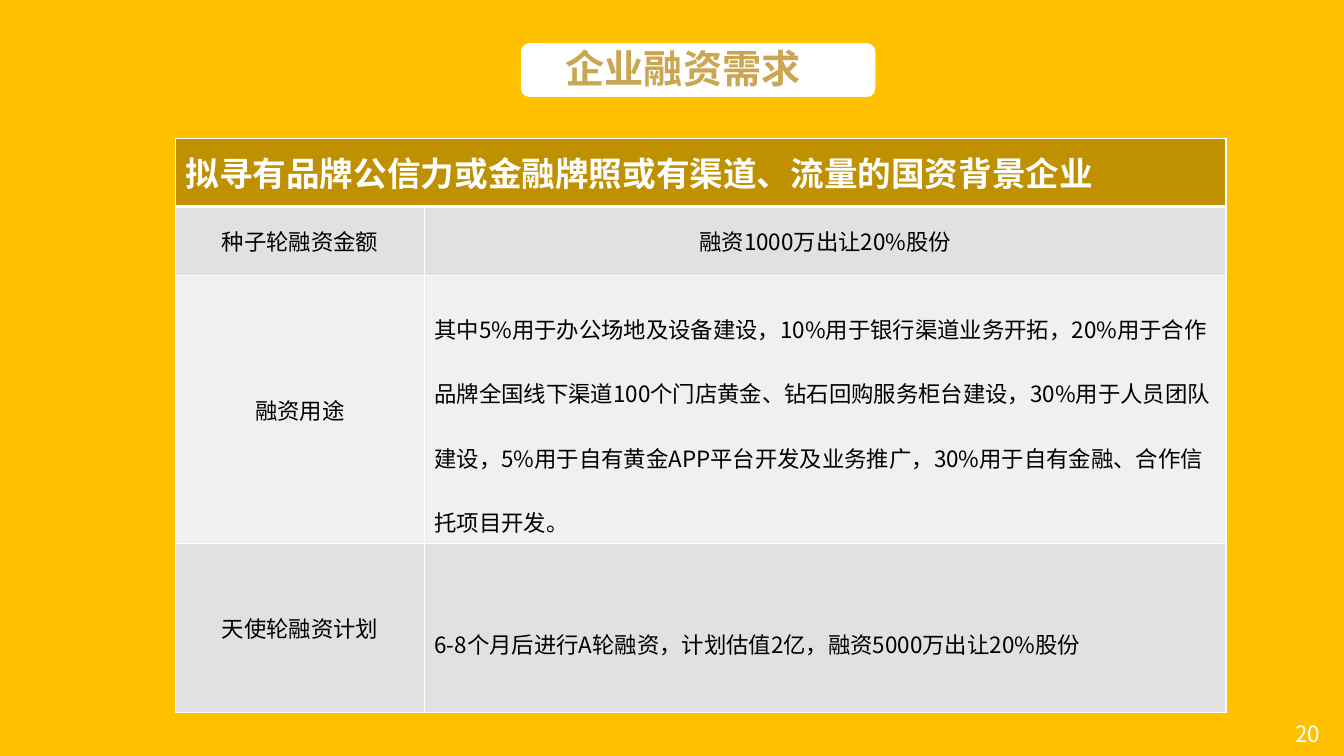
from lxml import etree
from pptx import Presentation
from pptx.dml.color import RGBColor
from pptx.enum import shapes, text
from pptx.oxml import ns
from pptx.util import Inches, Pt

GOLD = RGBColor(0xFF, 0xC0, 0x00)
EDGE = RGBColor(0xFF, 0xC6, 0x00)
WHITE = RGBColor(0xFF, 0xFF, 0xFF)
BLACK = RGBColor(0, 0, 0)
TAN = RGBColor(0xCA, 0xA6, 0x52)
BROWN = RGBColor(0xBF, 0x90, 0x00)
GREY = RGBColor(0xE1, 0xE1, 0xE1)
PALE = RGBColor(0xF0, 0xF0, 0xF0)
SANS = "Noto Sans CJK SC"


def style(para, size, color, bold=False, name=SANS):
    for run in para.runs:
        font = run.font
        font.size, font.bold, font.name = Pt(size), bold, name
        font.color.rgb = color
        latin = run._r.rPr.find(ns.qn("a:latin"))
        east = etree.Element(ns.qn("a:ea"), typeface=SANS)
        latin.addnext(east)


def border(cell, base):
    props = cell._tc.get_or_add_tcPr()
    for spot, (side, width) in enumerate([("L", 1), ("R", 1), ("T", 1), ("B", base)]):
        line = etree.Element(ns.qn("a:ln" + side), w=str(Pt(width)))
        fill = etree.SubElement(line, ns.qn("a:solidFill"))
        etree.SubElement(fill, ns.qn("a:srgbClr"), val=str(WHITE))
        props.insert(spot, line)


deck = Presentation()
deck.slide_width, deck.slide_height = Inches(13.33), Inches(7.5)
slide = deck.slides.add_slide(deck.slide_layouts[5])
slide.background.fill.solid()
slide.background.fill.fore_color.rgb = GOLD

plate = slide.shapes.add_shape(
    shapes.MSO_SHAPE.ROUNDED_RECTANGLE, Inches(5.16), Inches(0.42), Inches(3.53), Inches(0.55))
plate.shadow.inherit = False
plate.fill.solid()
plate.fill.fore_color.rgb = WHITE
plate.line.color.rgb = EDGE
plate.line.width = Pt(1)

title = slide.shapes.title
slide.shapes._spTree.append(title._element)
title.left, title.top = Inches(5.51), Inches(0.44)
title.width, title.height = Inches(2.56), Inches(0.53)
frame = title.text_frame
frame.text = "企业融资需求"
frame.word_wrap = False
frame.auto_size = text.MSO_AUTO_SIZE.NONE
frame.vertical_anchor = text.MSO_ANCHOR.TOP
para = frame.paragraphs[0]
para.alignment = text.PP_ALIGN.LEFT
para.line_spacing = 0.9
style(para, 28, TAN, True)

rows = [
    ("拟寻有品牌公信力或金融牌照或有渠道、流量的国资背景企业", "", 0.68, BROWN),
    ("种子轮融资金额", "融资1000万出让20%股份", 0.68, GREY),
    ("融资用途",
     "其中5%用于办公场地及设备建设，10%用于银行渠道业务开拓，20%用于合作品牌全国线下渠道"
     "100个门店黄金、钻石回购服务柜台建设，30%用于人员团队建设，5%用于自有黄金APP平台开发"
     "及业务推广，30%用于自有金融、合作信托项目开发。", 2.23, PALE),
    ("天使轮融资计划", "6-8个月后进行A轮融资，计划估值2亿，融资5000万出让20%股份", 1.68, GREY),
]
table = slide.shapes.add_table(
    len(rows), 2, Inches(1.74), Inches(1.37), Inches(10.42), Inches(5.27)).table
table.columns[0].width, table.columns[1].width = Inches(2.47), Inches(7.95)
table.cell(0, 0).merge(table.cell(0, 1))
for r, (label, detail, height, color) in enumerate(rows):
    table.rows[r].height = Inches(height)
    for c, words in enumerate((label, detail)):
        cell = table.cell(r, c)
        cell.fill.solid()
        cell.fill.fore_color.rgb = color
        border(cell, 1 if r else 3)
        cell.vertical_anchor = text.MSO_ANCHOR.MIDDLE
        cell.text_frame.text = words
        para = cell.text_frame.paragraphs[0]
        if r == 0:
            style(para, 24, WHITE, True, "Calibri")
            continue
        if c == 0 or r == 1:
            para.alignment = text.PP_ALIGN.CENTER
        else:
            para.line_spacing = 2.0
        style(para, 16, BLACK)

page = slide.shapes.add_textbox(Inches(12.75), Inches(7.14), Inches(0.51), Inches(0.31))
frame = page.text_frame
frame.text = "20"
frame.word_wrap = True
frame.vertical_anchor = text.MSO_ANCHOR.MIDDLE
frame.paragraphs[0].line_spacing = 0.9
style(frame.paragraphs[0], 16, WHITE)

deck.save("out.pptx")
